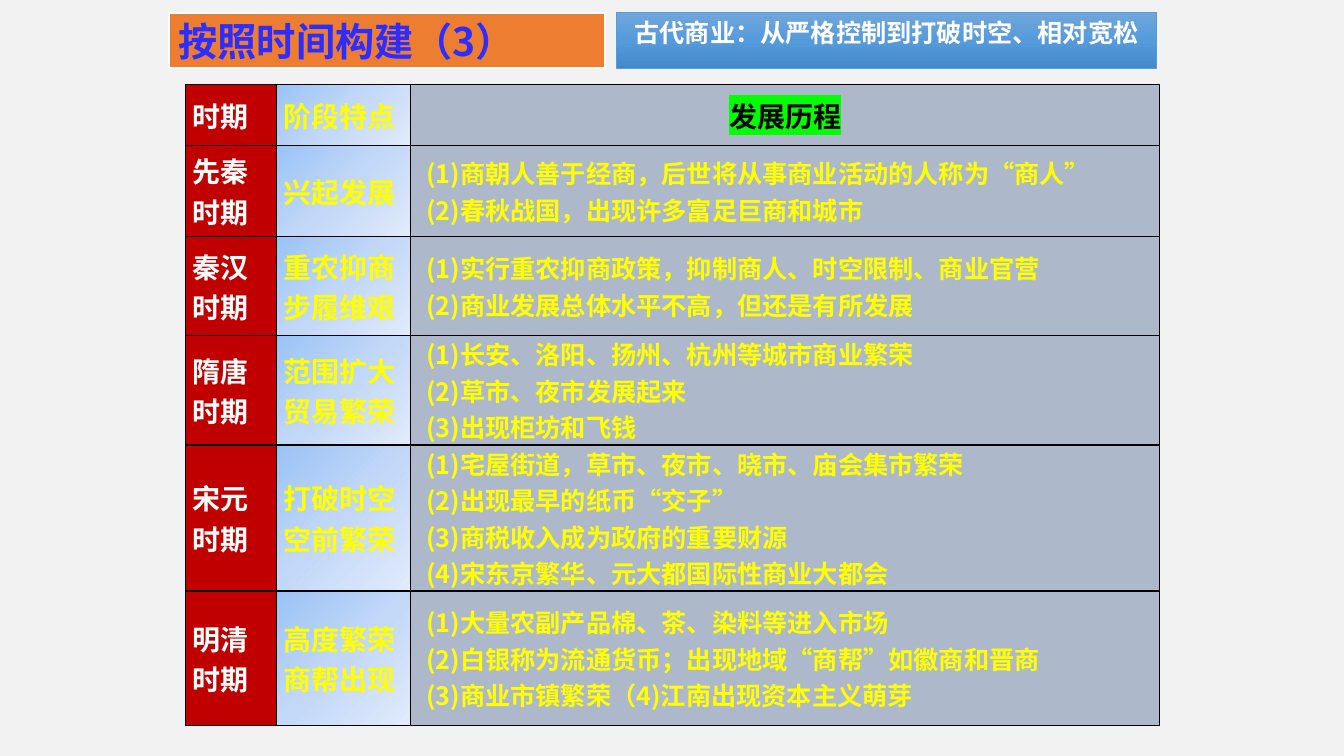
from copy import deepcopy
from lxml.etree import SubElement
from pptx import Presentation
from pptx.dml.color import RGBColor
from pptx.enum.shapes import MSO_SHAPE
from pptx.enum.text import MSO_ANCHOR, PP_ALIGN
from pptx.oxml.ns import qn
from pptx.util import Pt

TITLE = "按照时间构建（3）"
THEME = "古代商业：从严格控制到打破时空、相对宽松"
HEADER = ("时期", "阶段特点", "发展历程")
PERIODS = [
    ("先秦", "兴起发展", [
        "(1)商朝人善于经商，后世将从事商业活动的人称为“商人”",
        "(2)春秋战国，出现许多富足巨商和城市"]),
    ("秦汉", "重农抑商步履维艰", [
        "(1)实行重农抑商政策，抑制商人、时空限制、商业官营",
        "(2)商业发展总体水平不高，但还是有所发展"]),
    ("隋唐", "范围扩大贸易繁荣", [
        "(1)长安、洛阳、扬州、杭州等城市商业繁荣",
        "(2)草市、夜市发展起来",
        "(3)出现柜坊和飞钱"]),
    ("宋元", "打破时空空前繁荣", [
        "(1)宅屋街道，草市、夜市、晓市、庙会集市繁荣",
        "(2)出现最早的纸币“交子”",
        "(3)商税收入成为政府的重要财源",
        "(4)宋东京繁华、元大都国际性商业大都会"]),
    ("明清", "高度繁荣商帮出现", [
        "(1)大量农副产品棉、茶、染料等进入市场",
        "(2)白银称为流通货币；出现地域“商帮”如徽商和晋商",
        "(3)商业市镇繁荣（4)江南出现资本主义萌芽"]),
]
COLS = [65, 96, 535]
ROWS = [43.2, 65.5, 70.5, 72, 96, 96]
SANS, SERIF, LATIN = "Noto Sans CJK SC", "Times New Roman", "Montserrat"
BANNER_GRAD = ("71A6DB", "559BDB", "448ACA")
STAGE_GRAD = ("9AC3F5", "C2D8F8", "E1EBFB")


def rgb(color):
    return RGBColor.from_string(color)


def paint(fill, color):
    fill.solid()
    fill.fore_color.rgb = rgb(color)


def paint_gradient(fill, element, colors, angle):
    fill.gradient()
    fill.gradient_angle = 360 - angle
    stops = next(element.iter(qn("a:gsLst")))
    stops.append(deepcopy(stops[0]))
    for i, (stop, color) in enumerate(zip(fill.gradient_stops, colors)):
        stop.position = i / 2
        stop.color.rgb = rgb(color)


def write(tf, lines, size, color, font, align=PP_ALIGN.LEFT, indent=0, highlight=None):
    tf.text = "\n".join(lines)
    for p in tf.paragraphs:
        p.alignment = align
        if indent:
            pr = p._p.get_or_add_pPr()
            pr.set("marL", str(Pt(indent)))
            pr.set("indent", "0")
        for r in p.runs:
            r.font.size, r.font.bold, r.font.name = Pt(size), True, font
            r.font.color.rgb = rgb(color)
            rpr = r._r.get_or_add_rPr()
            if highlight:
                mark = SubElement(rpr, qn("a:highlight"))
                SubElement(mark, qn("a:srgbClr")).set("val", highlight)
                rpr.find(qn("a:solidFill")).addnext(mark)
            ea = SubElement(rpr, qn("a:ea"))
            ea.set("typeface", SANS)


def add_box(slide, left, top, width, height, line, weight):
    sp = slide.shapes.add_shape(MSO_SHAPE.RECTANGLE, Pt(left), Pt(top), Pt(width), Pt(height))
    sp.shadow.inherit = False
    sp.line.color.rgb = rgb(line)
    sp.line.width = Pt(weight)
    sp.text_frame.word_wrap = True
    return sp


def add_borders(cell):
    pr = cell._tc.get_or_add_tcPr()
    for i, side in enumerate(("lnL", "lnR", "lnT", "lnB")):
        ln = SubElement(pr, qn("a:" + side))
        ln.set("w", str(Pt(1)))
        SubElement(SubElement(ln, qn("a:solidFill")), qn("a:srgbClr")).set("val", "000000")
        pr.insert(i, ln)


def add_periods(slide):
    table = slide.shapes.add_table(len(ROWS), len(COLS), Pt(132.5), Pt(60.5),
                                   Pt(sum(COLS)), Pt(sum(ROWS))).table
    for col, width in zip(table.columns, COLS):
        col.width = Pt(width)
    for row, height in zip(table.rows, ROWS):
        row.height = Pt(height)
    for cell in table.iter_cells():
        cell.margin_left = cell.margin_right = Pt(5)
        cell.margin_top = cell.margin_bottom = 0
        cell.vertical_anchor = MSO_ANCHOR.MIDDLE
    rows = [([HEADER[0]], HEADER[1], [HEADER[2]])]
    rows += [([name, "时期"], stage, events) for name, stage, events in PERIODS]
    for i, (period, stage, events) in enumerate(rows):
        first, second, third = table.rows[i].cells
        paint(first.fill, "C00000")
        paint_gradient(second.fill, second._tc, STAGE_GRAD, 45)
        paint(third.fill, "ADB9CA")
        write(first.text_frame, period, 20, "FFFFFF", SERIF)
        write(second.text_frame, [stage], 20, "FFFF00", SANS)
        if i == 0:
            write(third.text_frame, events, 20, "000000", SERIF, PP_ALIGN.CENTER,
                  highlight="00FF00")
        else:
            write(third.text_frame, events, 18, "FFFF00", SANS, indent=6)
    for cell in table.iter_cells():
        add_borders(cell)


def main():
    prs = Presentation()
    prs.slide_width, prs.slide_height = Pt(960), Pt(540)
    slide = prs.slides.add_slide(prs.slide_layouts[6])
    paint(slide.background.fill, "F2F2F2")

    banner = add_box(slide, 440.5, 8.8, 385.5, 40, "5B9BD5", 0.5)
    paint_gradient(banner.fill, banner._element, BANNER_GRAD, 90)
    banner.text_frame.vertical_anchor = MSO_ANCHOR.TOP
    write(banner.text_frame, [THEME], 18, "FFFFFF", LATIN, PP_ALIGN.CENTER)

    add_periods(slide)

    title = add_box(slide, 120.5, 9.2, 311.5, 39.5, "FFFFFF", 1.5)
    paint(title.fill, "ED7D31")
    title.text_frame.vertical_anchor = MSO_ANCHOR.MIDDLE
    write(title.text_frame, [TITLE], 28, "2D2DFF", SANS)

    prs.save("out.pptx")


if __name__ == "__main__":
    main()
